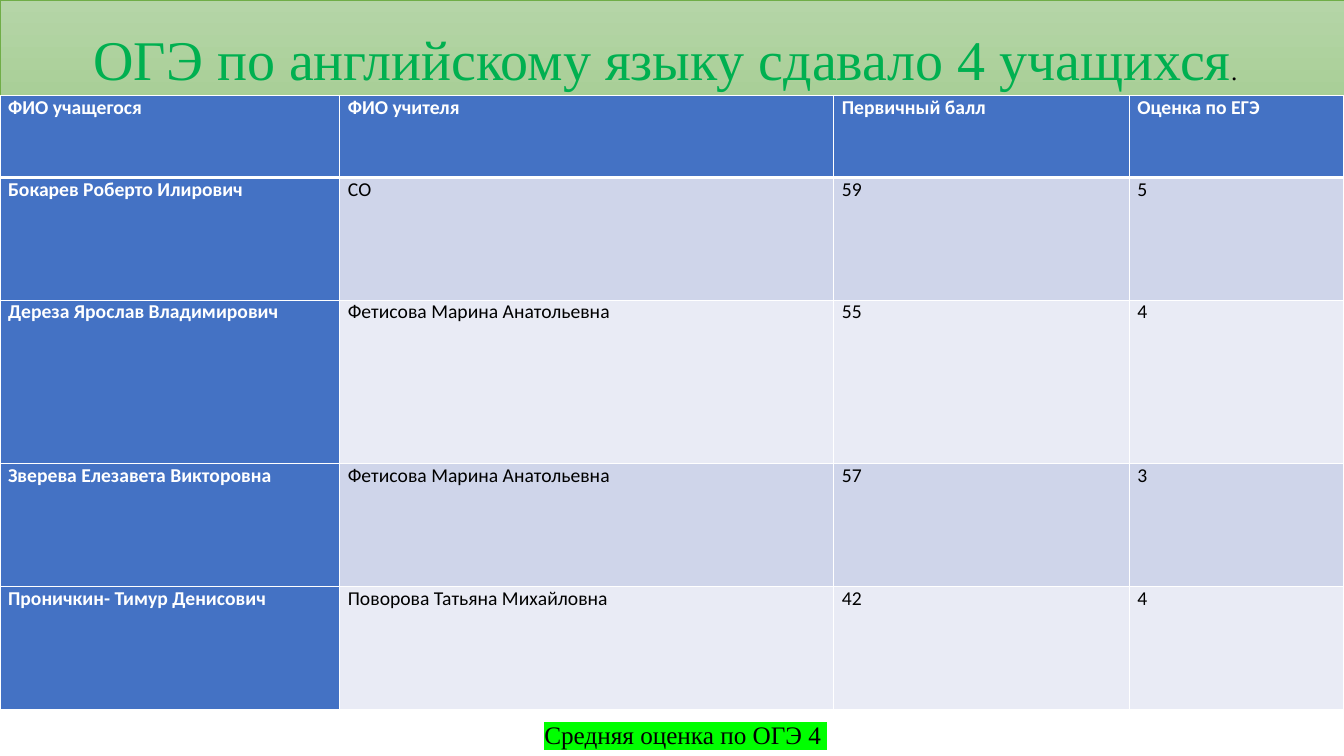
from lxml import etree
from pptx import Presentation
from pptx.dml.color import RGBColor
from pptx.enum.text import MSO_ANCHOR, MSO_AUTO_SIZE, PP_ALIGN
from pptx.oxml.ns import qn
from pptx.util import Inches, Pt

COLORS = {
    "title_top": "B5D5A7", "title_bottom": "9CC987", "title_line": "70AD47",
    "title_text": "00B050", "header": "4472C4", "band_dark": "CFD5EA",
    "band_light": "E9EBF5", "white": "FFFFFF", "black": "000000",
    "highlight": "00FF00",
}
SERIF, SANS = "Times New Roman", "Calibri"
COLUMN_WIDTHS = [3.37, 4.9, 2.93, 2.13]
ROW_HEIGHTS = [0.81, 1.22, 1.62, 1.22, 1.22]
RESULTS = [
    ("ФИО учащегося", "ФИО учителя", "Первичный балл", "Оценка по ЕГЭ"),
    ("Бокарев Роберто Илирович", "СО", "59", "5"),
    ("Дереза Ярослав Владимирович", "Фетисова Марина Анатольевна", "55", "4"),
    ("Зверева Елезавета Викторовна", "Фетисова Марина Анатольевна", "57", "3"),
    ("Проничкин- Тимур Денисович", "Поворова Татьяна Михайловна", "42", "4"),
]


def rgb(name):
    return RGBColor.from_string(COLORS[name])


def add_text(p, text, size=14, font=SANS, color="black", bold=False,
             highlight=None, align=PP_ALIGN.JUSTIFY, spacing=0.98, after=7.5):
    p.alignment, p.line_spacing, p.space_after = align, spacing, Pt(after)
    r = p.add_run()
    r.text = text
    r.font.size, r.font.name, r.font.bold = Pt(size), font, bold
    r.font.color.rgb = rgb(color)
    if highlight:
        mark = etree.Element(qn("a:highlight"))
        etree.SubElement(mark, qn("a:srgbClr"), val=COLORS[highlight])
        r.font.fill  # the highlight element follows the solid fill
        r.font._element.find(qn("a:solidFill")).addnext(mark)


def add_title(s, left, top, width, height):
    sp = s.shapes.title
    sp.left, sp.top, sp.width, sp.height = map(Inches, (left, top, width, height))
    sp.fill.gradient()
    sp.fill.gradient_angle = 270
    for stop, name, position in zip(sp.fill.gradient_stops,
                                    ("title_top", "title_bottom"), (0, 1)):
        stop.color.rgb, stop.position = rgb(name), position
    sp.line.color.rgb, sp.line.width = rgb("title_line"), Pt(0.5)
    tf = sp.text_frame
    tf.word_wrap, tf.auto_size = True, MSO_AUTO_SIZE.NONE
    tf.vertical_anchor = MSO_ANCHOR.TOP
    tf.margin_top, tf.margin_right = Inches(0.32), Inches(0.23)
    line = dict(font=SERIF, align=PP_ALIGN.CENTER, spacing=0.9, after=0)
    p = tf.paragraphs[0]
    add_text(p, "ОГЭ по английскому языку сдавало 4 учащихся",
             size=40, color="title_text", **line)
    add_text(p, ".", size=18, **line)


def add_borders(cell, row):
    tcPr = cell._tc.get_or_add_tcPr()
    thick = {0: "lnB", 1: "lnT"}.get(row)
    for side in ("lnL", "lnR", "lnT", "lnB"):
        ln = etree.SubElement(tcPr, qn("a:" + side),
                              w=str(Pt(3 if side == thick else 1)))
        fill = etree.SubElement(ln, qn("a:solidFill"))
        etree.SubElement(fill, qn("a:srgbClr"), val=COLORS["white"])


def add_results_table(s, left, top):
    frame = s.shapes.add_table(
        len(ROW_HEIGHTS), len(COLUMN_WIDTHS), Inches(left), Inches(top),
        Inches(sum(COLUMN_WIDTHS)), Inches(sum(ROW_HEIGHTS)))
    table = frame.table
    for column, width in zip(table.columns, COLUMN_WIDTHS):
        column.width = Inches(width)
    for i, (row, height) in enumerate(zip(table.rows, ROW_HEIGHTS)):
        row.height = Inches(height)
        for j, text in enumerate(RESULTS[i]):
            cell = row.cells[j]
            is_header = i == 0 or j == 0
            band = "band_dark" if i % 2 else "band_light"
            add_borders(cell, i)
            cell.fill.solid()
            cell.fill.fore_color.rgb = rgb("header" if is_header else band)
            cell.margin_left = cell.margin_right = Inches(0.08)
            cell.margin_top = cell.margin_bottom = 0
            add_text(cell.text_frame.paragraphs[0], text, bold=is_header,
                     color="white" if is_header else "black")


def add_average(s, left, top, width, height):
    box = s.shapes.add_textbox(*map(Inches, (left, top, width, height)))
    tf = box.text_frame
    tf.word_wrap, tf.auto_size = True, MSO_AUTO_SIZE.SHAPE_TO_FIT_TEXT
    add_text(tf.paragraphs[0], "Средняя оценка по ОГЭ 4 ", size=18,
             font=SERIF, highlight="highlight")


def main():
    prs = Presentation()
    prs.slide_width, prs.slide_height = Inches(13.33), Inches(7.5)
    s = prs.slides.add_slide(prs.slide_layouts[5])
    add_title(s, 0, 0, 13.33, 1.85)
    add_results_table(s, 0, 0.95)
    add_average(s, 5.3, 7.1, 6.69, 0.4)
    prs.save("out.pptx")


if __name__ == "__main__":
    main()
